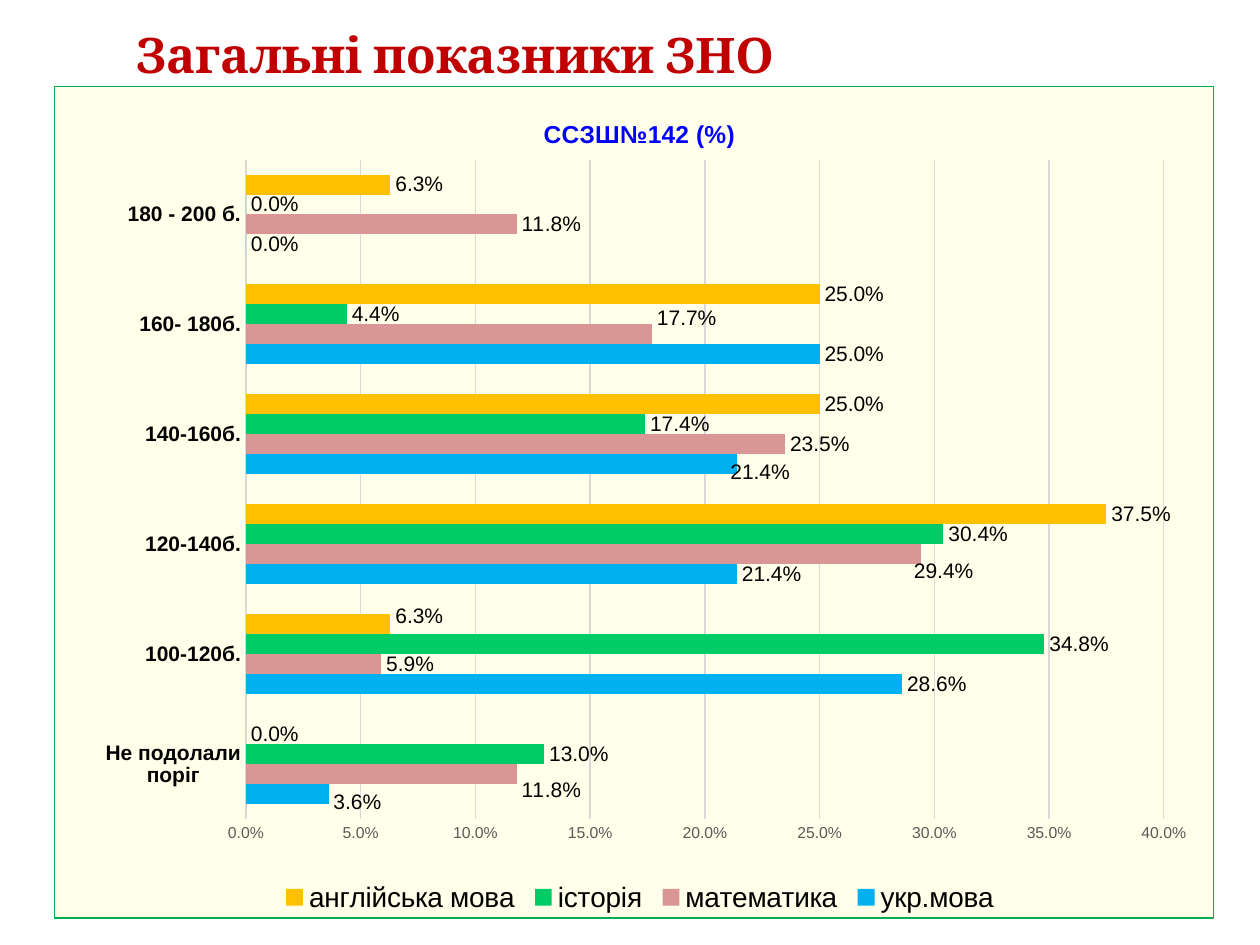
from dataclasses import dataclass

from lxml import etree
from pptx import Presentation
from pptx.chart.data import CategoryChartData
from pptx.dml.color import RGBColor
from pptx.enum.chart import XL_CHART_TYPE as ChartType
from pptx.enum.chart import XL_LABEL_POSITION as LabelPosition
from pptx.enum.chart import XL_LEGEND_POSITION as LegendPosition
from pptx.enum.chart import XL_TICK_MARK as TickMark
from pptx.enum.text import MSO_ANCHOR as Anchor
from pptx.enum.text import PP_ALIGN as Align
from pptx.oxml import parse_xml
from pptx.oxml.ns import nsdecls, qn
from pptx.util import Cm, Pt


@dataclass(frozen=True)
class Theme:
    heading_font: str = "Cambria"
    body_font: str = "Arial"
    heading: str = "C00000"
    chart_title: str = "0000FF"
    text: str = "000000"
    muted: str = "595959"
    grid: str = "D9D9D9"
    panel: str = "FFFFCC"
    panel_opacity: int = 40
    border: str = "00B050"
    heading_size: int = 28
    chart_title_size: int = 14
    label_size: int = 12
    scale_size: int = 9
    legend_size: int = 16


@dataclass(frozen=True)
class Box:
    left: float
    top: float
    width: float
    height: float

    def lengths(self):
        return [Cm(value) for value in (self.left, self.top, self.width, self.height)]


THEME = Theme()
PERCENT = "0.0%"
SCORE_BANDS = ["Не подолали поріг", "100-120б.", "120-140б.", "140-160б.", "160- 180б.", "180 - 200 б."]
SUBJECTS = [
    ("укр.мова", "00B0F0", [0.036, 0.286, 0.214, 0.214, 0.25, 0],
     {0: (0, 0.01), 3: (-0.01, 0.01)}),
    ("математика", "D99694", [0.118, 0.059, 0.294, 0.235, 0.177, 0.118],
     {0: (0, 0.02), 2: (-0.01, 0.02), 4: (0, -0.02)}),
    ("історія", "00CC66", [0.13, 0.348, 0.304, 0.174, 0.044, 0], {}),
    ("англійська мова", "FFC000", [0, 0.063, 0.375, 0.25, 0.25, 0.063],
     {1: (0, -0.01)}),
]


def style_font(font, size, color, bold=False, name=THEME.body_font):
    font.name = name
    font.size = Pt(size)
    font.bold = bold
    font.color.rgb = RGBColor.from_string(color)


def set_layout(parent, index, **settings):
    for old_layout in parent.findall(qn("c:layout")):
        parent.remove(old_layout)
    layout = etree.Element(qn("c:layout"))
    manual = etree.SubElement(layout, qn("c:manualLayout"))
    for name, value in settings.items():
        etree.SubElement(manual, qn(f"c:{name}")).set("val", str(value))
    parent.insert(index, layout)


def style_panel(chart_space):
    panel = parse_xml(
        f'<c:spPr {nsdecls("c", "a")}>'
        f'<a:solidFill><a:srgbClr val="{THEME.panel}">'
        f'<a:alpha val="{THEME.panel_opacity * 1000}"/></a:srgbClr></a:solidFill>'
        f'<a:ln w="{Pt(0.75)}"><a:solidFill><a:srgbClr val="{THEME.border}"/></a:solidFill></a:ln>'
        "</c:spPr>"
    )
    chart_space.find(qn("c:chart")).addnext(panel)


def style_axes(chart):
    for axis in (chart.category_axis, chart.value_axis):
        axis.major_tick_mark = axis.minor_tick_mark = TickMark.NONE
        axis.format.line.fill.background()
    style_font(chart.category_axis.tick_labels.font, THEME.label_size, THEME.text, True)

    scale = chart.value_axis
    scale.minimum_scale, scale.maximum_scale, scale.major_unit = 0, 0.4, 0.05
    scale.has_major_gridlines = True
    scale.major_gridlines.format.line.color.rgb = RGBColor.from_string(THEME.grid)
    scale.major_gridlines.format.line.width = Pt(0.75)
    scale.tick_labels.number_format = PERCENT
    scale.tick_labels.number_format_is_linked = False
    style_font(scale.tick_labels.font, THEME.scale_size, THEME.muted)


def style_series(series, color, label_shifts):
    series.format.fill.solid()
    series.format.fill.fore_color.rgb = RGBColor.from_string(color)
    series.invert_if_negative = False

    labels = series.data_labels
    labels.show_value = True
    labels.position = LabelPosition.OUTSIDE_END
    labels.number_format = PERCENT
    labels.number_format_is_linked = False
    style_font(labels.font, THEME.label_size, THEME.text)

    for index, (shift_x, shift_y) in label_shifts.items():
        label = series.points[index].data_label
        style_font(label.font, THEME.label_size, THEME.text)
        label.position = LabelPosition.OUTSIDE_END
        element = series._element.xpath(f"c:dLbls/c:dLbl[c:idx/@val='{index}']")[0]
        set_layout(element, 1, x=shift_x, y=shift_y)


def add_heading(slide, box):
    shape = slide.shapes.add_textbox(*box.lengths())
    frame = shape.text_frame
    frame.word_wrap = True
    frame.vertical_anchor = Anchor.MIDDLE
    paragraph = frame.paragraphs[0]
    paragraph.text = "Загальні показники ЗНО"
    paragraph.alignment = Align.LEFT
    style_font(paragraph.font, THEME.heading_size, THEME.heading, True, THEME.heading_font)


def add_results_chart(slide, box):
    data = CategoryChartData(number_format=PERCENT)
    data.categories = SCORE_BANDS
    for name, _, values, _ in SUBJECTS:
        data.add_series(name, values)
    chart = slide.shapes.add_chart(ChartType.BAR_CLUSTERED, *box.lengths(), data).chart
    chart.font.name = THEME.body_font
    chart.font.size = Pt(10)
    style_panel(chart._chartSpace)

    plot = chart.plots[0]
    plot.gap_width = 150
    plot.overlap = 0
    plot.vary_by_categories = False
    for series, (_, color, _, label_shifts) in zip(plot.series, SUBJECTS):
        style_series(series, color, label_shifts)
    style_axes(chart)

    chart.has_title = True
    paragraph = chart.chart_title.text_frame.paragraphs[0]
    paragraph.text = "ССЗШ№142 (%)"
    style_font(paragraph.font, THEME.chart_title_size, THEME.chart_title, True)

    chart.has_legend = True
    chart.legend.position = LegendPosition.BOTTOM
    chart.legend.include_in_layout = False
    style_font(chart.legend.font, THEME.legend_size, THEME.text)

    edges = {"xMode": "edge", "yMode": "edge"}
    plot_area = chart._chartSpace.find(".//" + qn("c:plotArea"))
    set_layout(plot_area, 0, layoutTarget="inner", **edges, x=0.165, y=0.088, w=0.792, h=0.793)
    set_layout(chart.chart_title._element, 1, **edges, x=0.418, y=0.033)
    set_layout(chart.legend._element, 1, **edges, x=0.19, y=0.95, w=0.63, h=0.05)


def main():
    presentation = Presentation()
    presentation.slide_width = Cm(25.4)
    presentation.slide_height = Cm(19.05)
    slide = presentation.slides.add_slide(presentation.slide_layouts[6])
    add_heading(slide, Box(2.49, 0.13, 21.59, 1.9))
    add_results_chart(slide, Box(1.09, 1.73, 23.39, 16.79))
    presentation.save("out.pptx")


if __name__ == "__main__":
    main()
